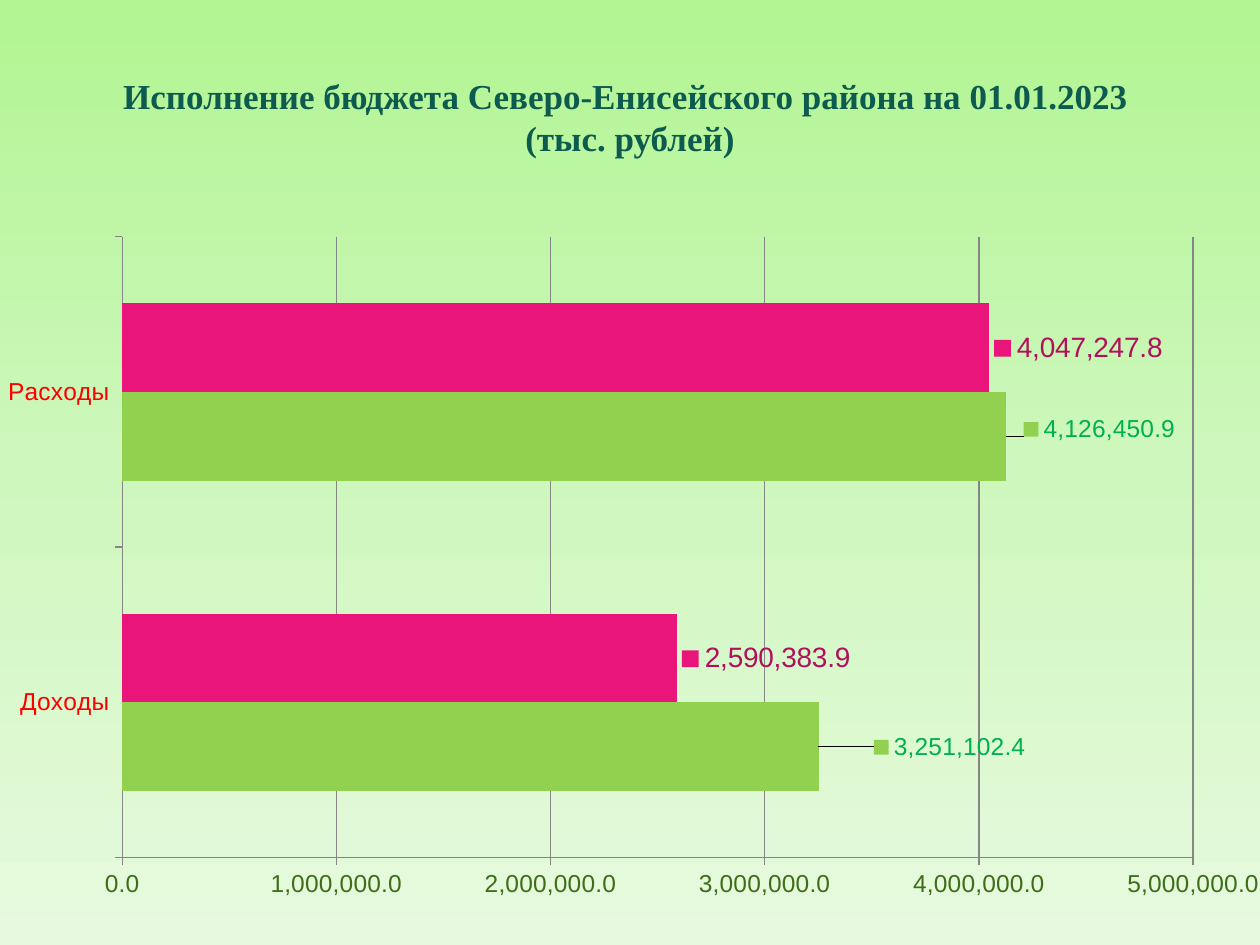
from copy import deepcopy

from lxml import etree
from pptx import Presentation
from pptx.chart.data import CategoryChartData
from pptx.dml.color import RGBColor
from pptx.enum.chart import XL_CHART_TYPE, XL_LABEL_POSITION, XL_TICK_MARK
from pptx.enum.text import MSO_ANCHOR, PP_ALIGN
from pptx.oxml.ns import qn
from pptx.util import Inches, Pt

BAR = XL_CHART_TYPE.BAR_CLUSTERED
OUT_END = XL_LABEL_POSITION.OUTSIDE_END
TICK_OUT, TICK_NONE = XL_TICK_MARK.OUTSIDE, XL_TICK_MARK.NONE
MIDDLE, CENTER = MSO_ANCHOR.MIDDLE, PP_ALIGN.CENTER

TITLE = ["Исполнение бюджета Северо-Енисейского района на 01.01.2023 ",
         "(тыс. рублей)"]
CATS = ["Доходы", "Расходы"]
SERIES = [
    {"name": "Series 1", "vals": [3251102.4, 4126450.9], "fill": "92D050",
     "ink": "00B050", "size": 14, "shifts": [(0.04, 0), (0.01, -0.01)]},
    {"name": "Series 2", "vals": [2590383.9, 4047247.8], "fill": "EA157A",
     "ink": "B0105C", "size": 16, "shifts": []},
]
FORMAT = "#,##0.0"
PLOT = {"x": 0.1, "y": 0.06, "w": 0.85, "h": 0.85}
PLOT["x"] = 0.097

THEME = {
    "back": [(0, "B2F592"), (0.5, "CEF7BD"), (1, "E7FADF")],
    "title": "0D5A4F", "cats": "FF0000", "values": "3F6D19", "line": "868686",
    "head": "Times New Roman", "body": "Arial",
    "title_size": 20, "axis_size": 14,
}


def style(font, face, size, ink):
    font.name, font.size = face, Pt(size)
    font.color.rgb = RGBColor.from_string(ink)


def paint(fill):
    fill.gradient()
    fill.gradient_angle = 270
    first = fill.gradient_stops[0]
    stops = fill._fill._gradFill.find(qn("a:gsLst"))
    stops.insert(1, deepcopy(stops[0]))
    for stop, (pos, tint) in zip(fill.gradient_stops, THEME["back"]):
        stop.position = pos
        stop.color.rgb = RGBColor.from_string(tint)


def place(parent, index, parts):
    """Put a manual layout with the given parts into a chart element."""
    for old in parent.findall(qn("c:layout")):
        parent.remove(old)
    layout = etree.Element(qn("c:layout"))
    manual = etree.SubElement(layout, qn("c:manualLayout"))
    for tag, val in parts.items():
        etree.SubElement(manual, qn("c:" + tag)).set("val", str(val))
    parent.insert(index, layout)


def format_label(label, item):
    style(label.font, THEME["body"], item["size"], item["ink"])
    label.position = OUT_END


def add_labels(series, item):
    labels = series.data_labels
    labels.show_value = labels.show_legend_key = True
    labels.number_format, labels.number_format_is_linked = FORMAT, False
    format_label(labels, item)
    for i, (x, y) in enumerate(item["shifts"]):
        format_label(series.points[i].data_label, item)
        node = series._element.findall(".//" + qn("c:dLbl"))[i]
        node.find(qn("c:showLegendKey")).set("val", "1")
        place(node, 1, {"x": x, "y": y})


def format_axis(axis, ink):
    style(axis.tick_labels.font, THEME["body"], THEME["axis_size"], ink)
    axis.major_tick_mark, axis.minor_tick_mark = TICK_OUT, TICK_NONE
    draw(axis.format.line)


def draw(line):
    line.color.rgb = RGBColor.from_string(THEME["line"])
    line.width = Pt(0.75)


def add_title(slide):
    title = slide.shapes.title
    title.left, title.top = Inches(0.5), Inches(0.3)
    title.width, title.height = Inches(9), Inches(1.25)
    frame = title.text_frame
    frame.vertical_anchor, frame.word_wrap = MIDDLE, True
    para = frame.paragraphs[0]
    para.alignment = CENTER
    for i, text in enumerate(TITLE):
        if i:
            para.add_line_break()
        run = para.add_run()
        run.text = text
        style(run.font, THEME["head"], THEME["title_size"], THEME["title"])
        run.font.bold = True


def add_bars(slide):
    data = CategoryChartData(number_format=FORMAT)
    data.categories = CATS
    for item in SERIES:
        data.add_series(item["name"], item["vals"])
    chart = slide.shapes.add_chart(
        BAR, Inches(0), Inches(1.53), Inches(10), Inches(5.8), data).chart
    style(chart.font, THEME["body"], 18, "000000")
    chart.has_legend = chart.has_title = False
    plot = chart.plots[0]
    plot.gap_width, plot.overlap, plot.vary_by_categories = 150, 0, False
    for series, item in zip(plot.series, SERIES):
        series.format.fill.solid()
        series.format.fill.fore_color.rgb = RGBColor.from_string(item["fill"])
        add_labels(series, item)
    format_axis(chart.category_axis, THEME["cats"])
    axis = chart.value_axis
    format_axis(axis, THEME["values"])
    axis.minimum_scale, axis.maximum_scale, axis.major_unit = 0, 5e6, 1e6
    axis.tick_labels.number_format = FORMAT
    axis.tick_labels.number_format_is_linked = False
    axis.has_major_gridlines = True
    draw(axis.major_gridlines.format.line)
    area = chart._chartSpace.find(".//" + qn("c:plotArea"))
    place(area, 0, {"layoutTarget": "inner", "xMode": "edge",
                    "yMode": "edge", **PLOT})


def main():
    deck = Presentation()
    deck.slide_width, deck.slide_height = Inches(10), Inches(7.5)
    slide = deck.slides.add_slide(deck.slide_layouts[5])
    paint(slide.background.fill)
    add_title(slide)
    add_bars(slide)
    deck.save("out.pptx")


if __name__ == "__main__":
    main()
